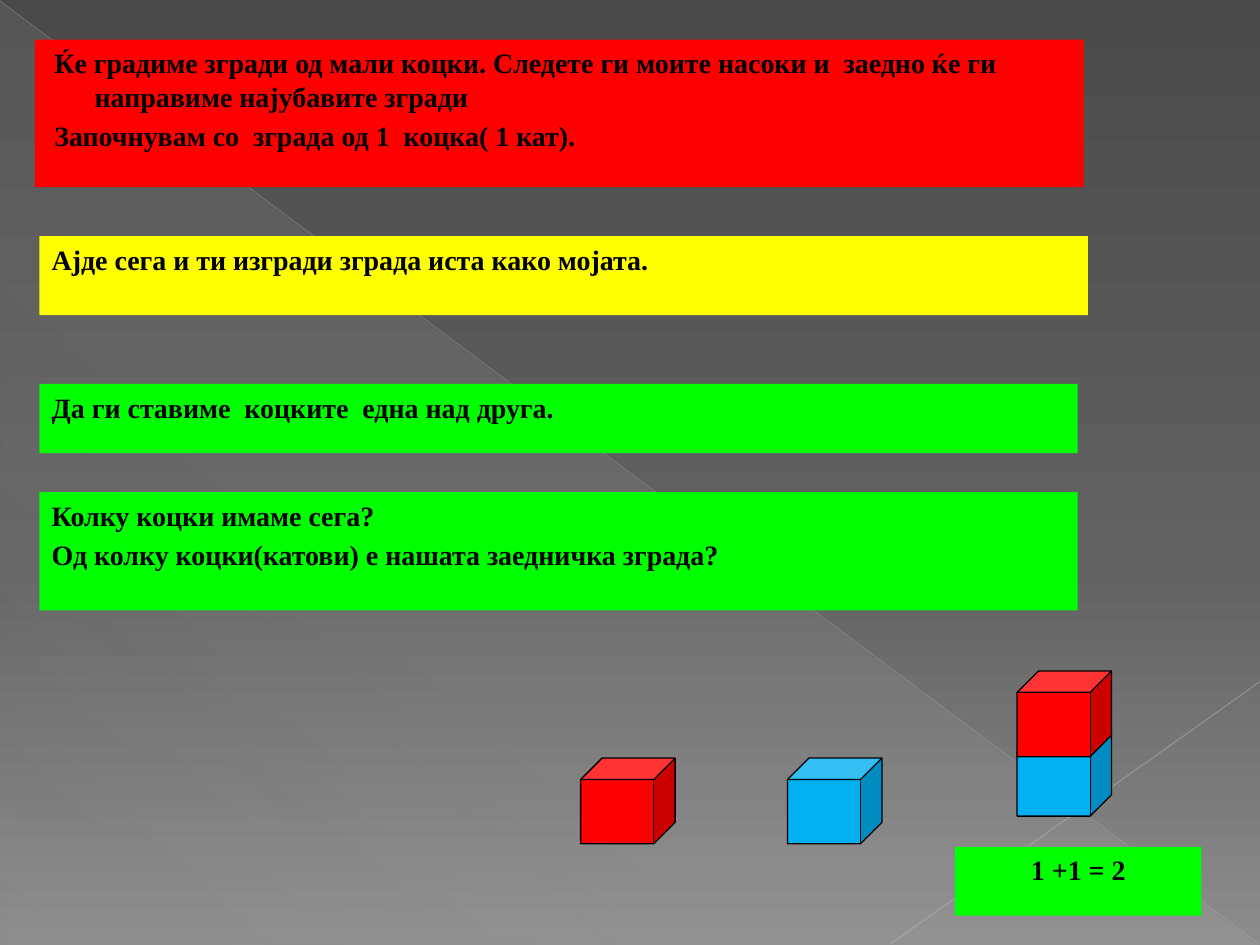
from pptx import Presentation
from pptx import util as u
from pptx.dml.color import RGBColor
from pptx.enum import shapes, text
from pptx.oxml.ns import qn
from lxml import etree

BLACK = RGBColor(0x00, 0x00, 0x00)
RED = RGBColor(0xFF, 0x00, 0x00)
YELLOW = RGBColor(0xFF, 0xFF, 0x00)
GREEN = RGBColor(0x00, 0xFF, 0x00)
BLUE = RGBColor(0x00, 0xB0, 0xF0)
DARK_GRAY = RGBColor(0x4A, 0x4A, 0x4A)
MID_GRAY = RGBColor(0x62, 0x62, 0x62)
LIGHT_GRAY = RGBColor(0x8C, 0x8C, 0x8C)
PALE = RGBColor(0xD2, 0xD2, 0xD2)
LONG_RAY = RGBColor(0xBF, 0xBF, 0xBF)
SHORT_RAY = RGBColor(0xC6, 0xC6, 0xC6)


def add_alpha(color_element, percent):
    etree.SubElement(color_element, qn("a:alpha"), val=str(percent * 1000))


def write_text(box, lines, size=16, color=BLACK, font="Times New Roman",
               bold=True, align=text.PP_ALIGN.LEFT, hanging=27, gap=3.2):
    """Fill a box with paragraphs that share one format."""
    frame = box.text_frame
    frame.word_wrap = True
    frame.vertical_anchor = text.MSO_ANCHOR.TOP
    for index, line in enumerate(lines):
        para = frame.add_paragraph() if index else frame.paragraphs[0]
        para.alignment = align
        para.space_before = u.Pt(gap if index else 0)
        properties = para._p.get_or_add_pPr()
        properties.set("marL", str(u.Pt(hanging)))
        properties.set("indent", str(u.Pt(-hanging)))
        span = para.add_run()
        span.text = line
        span.font.name = font
        span.font.size = u.Pt(size)
        span.font.bold = bold
        span.font.color.rgb = color


class Painter:
    """Holds the style and the page being drawn."""
    cube_width = 54
    cube_height = 48.96
    outline = 0.75

    def __init__(self, page):
        self.page = page

    def gradient(self, fill, element, angle, stops):
        fill.gradient()
        fill.gradient_angle = angle
        stop_list = element.find(".//" + qn("a:gsLst"))
        for old_stop in list(stop_list):
            stop_list.remove(old_stop)
        for position, color, opacity in stops:
            stop = etree.SubElement(stop_list, qn("a:gs"), pos=str(position * 1000))
            value = etree.SubElement(stop, qn("a:srgbClr"), val=str(color))
            if opacity < 100:
                add_alpha(value, opacity)

    def background(self, angle, stops):
        self.gradient(self.page.background.fill, self.page.element, angle, stops)

    def shape(self, kind, left, top, width, height):
        shape = self.page.shapes.add_shape(
            kind, u.Pt(left), u.Pt(top), u.Pt(width), u.Pt(height))
        shape.shadow.inherit = False
        shape.line.fill.background()
        return shape

    def triangle(self, left, top, width, height, angle, stops):
        shape = self.shape(shapes.MSO_SHAPE.RIGHT_TRIANGLE, left, top, width, height)
        self.gradient(shape.fill, shape._element, angle, stops)

    def ray(self, start, end, color, width, opacity):
        ray = self.page.shapes.add_connector(
            shapes.MSO_CONNECTOR.STRAIGHT, *map(u.Pt, start + end))
        ray.line.color.rgb = color
        ray.line.width = u.Pt(width)
        properties = ray._element.spPr
        add_alpha(properties.find(".//" + qn("a:srgbClr")), opacity)
        etree.SubElement(properties, qn("a:effectLst"))

    def panel(self, left, top, width, height, color, lines, **text_format):
        box = self.shape(shapes.MSO_SHAPE.RECTANGLE, left, top, width, height)
        box.fill.solid()
        box.fill.fore_color.rgb = color
        write_text(box, lines, **text_format)

    def cube(self, left, top, color):
        cube = self.shape(shapes.MSO_SHAPE.CUBE, left, top,
                          self.cube_width, self.cube_height)
        cube.adjustments[0] = 0.25 * self.cube_width / self.cube_width
        cube.fill.solid()
        cube.fill.fore_color.rgb = color
        cube.line.color.rgb = BLACK
        cube.line.width = u.Pt(self.outline)


def main():
    deck = Presentation()
    deck.slide_width, deck.slide_height = u.Pt(720), u.Pt(540)
    painter = Painter(deck.slides.add_slide(deck.slide_layouts[6]))

    # Backdrop
    painter.background(270, [(0, DARK_GRAY, 100), (60, MID_GRAY, 100),
                             (100, LIGHT_GRAY, 100)])
    painter.triangle(0.6, 1.2, 718.8, 538.5, 227,
                     [(0, PALE, 10), (70, PALE, 8), (100, PALE, 1)])
    painter.ray((0, 0.6), (719.4, 539.4), LONG_RAY, 0.39, 35)
    painter.ray((720, 389.5), (509, 539.4), SHORT_RAY, 0.47, 45)

    # Instructions
    painter.panel(20, 22.6, 599.2, 84.4, RED, [
        " Ќе градиме згради од мали коцки. Следете ги моите насоки и  "
        "заедно ќе ги направиме најубавите згради",
        " Започнувам со  зграда од 1  коцка( 1 кат)."])
    painter.panel(22.5, 134.9, 599.2, 45.2, YELLOW,
                  ["Ајде сега и ти изгради зграда иста како мојата."])
    painter.panel(22.5, 219.4, 593.4, 39.5, GREEN,
                  ["Да ги ставиме  коцките  една над друга."])
    painter.panel(22.5, 281.2, 593.4, 67.6, GREEN, [
        "Колку коцки имаме сега?",
        "Од колку коцки(катови) е нашата заедничка зграда?"])

    # Single cubes, then the tower from the bottom up
    for left, top, color in [(331.8, 433.2, RED), (450, 433.2, BLUE),
                             (581.2, 417.4, BLUE), (581.2, 383.4, RED)]:
        painter.cube(left, top, color)

    # Sum
    painter.panel(545.8, 483.9, 140.7, 39.4, GREEN, ["1 +1 = 2"],
                  align=text.PP_ALIGN.CENTER)

    deck.save("out.pptx")


if __name__ == "__main__":
    main()
